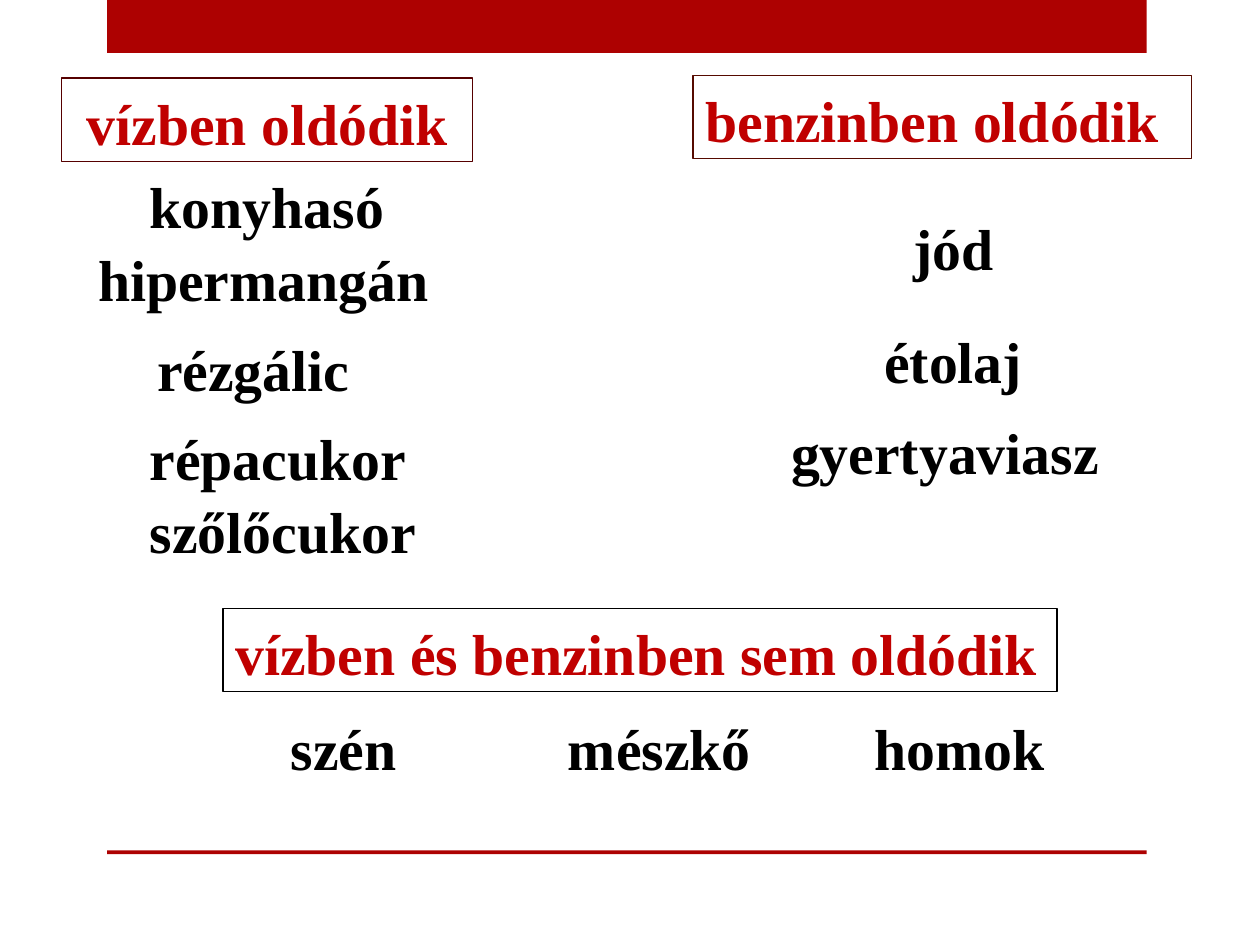
from dataclasses import dataclass

import pptx
import pptx.dml.color
import pptx.enum.shapes
import pptx.enum.text
import pptx.util

COLUMNS, ROWS = 100, 75
COLORS = {
    "band": "AD0101",
    "heading": "C00000",
    "substance": "000000",
    "water_frame": "560000",
    "petrol_frame": "560A00",
    "neither_frame": "000000",
}
LABEL_HEIGHT = 6.6


@dataclass(frozen=True)
class Area:
    column: float
    row: float
    width: float
    height: float = LABEL_HEIGHT


@dataclass(frozen=True)
class Heading:
    text: str
    area: Area
    frame: str
    centered: bool = False


@dataclass(frozen=True)
class Substance:
    lines: tuple[str, ...]
    area: Area


BANDS = (Area(8.5, 0, 82.5, 4.2), Area(8.5, 67.5, 82.5, 0.3))
HEADINGS = (
    Heading("vízben oldódik", Area(4.9, 6.2, 32.6), "water_frame", True),
    Heading("benzinben oldódik", Area(55, 6, 39.6), "petrol_frame"),
    Heading("vízben és benzinben sem oldódik", Area(17.7, 48.3, 66.2), "neither_frame"),
)
WATER_SOLUBLE = (
    Substance(("konyhasó",), Area(10.9, 12.8, 20.8)),
    Substance(("hipermangán",), Area(6.8, 18.6, 29)),
    Substance(("rézgálic",), Area(11.5, 25.7, 19)),
    Substance(("répacukor", "szőlőcukor"), Area(10.9, 32.8, 24.6, 12.1)),
)
PETROL_SOLUBLE = (
    Substance(("jód",), Area(71.5, 16.1, 10.6)),
    Substance(("étolaj",), Area(69.2, 25.1, 13)),
    Substance(("gyertyaviasz",), Area(61.8, 32.3, 27.7)),
)
INSOLUBLE_ROW = 55.8
INSOLUBLE = (
    Substance(("szén",), Area(22.1, INSOLUBLE_ROW, 11.2)),
    Substance(("mészkő",), Area(44.1, INSOLUBLE_ROW, 16.7)),
    Substance(("homok",), Area(68.4, INSOLUBLE_ROW, 17)),
)

deck = pptx.Presentation()
deck.slide_width = pptx.util.Inches(10)
deck.slide_height = pptx.util.Inches(7.5)
slide = deck.slides.add_slide(deck.slide_layouts[6])


def rgb(name: str) -> pptx.dml.color.RGBColor:
    return pptx.dml.color.RGBColor.from_string(COLORS[name])


def place(area: Area) -> tuple[int, int, int, int]:
    column = deck.slide_width / COLUMNS
    row = deck.slide_height / ROWS
    return (
        round(area.column * column),
        round(area.row * row),
        round(area.width * column),
        round(area.height * row),
    )


def draw_band(area: Area) -> None:
    band = slide.shapes.add_shape(
        pptx.enum.shapes.MSO_SHAPE.RECTANGLE, *place(area)
    )
    band.shadow.inherit = False
    band.fill.solid()
    band.fill.fore_color.rgb = rgb("band")
    band.line.fill.background()


def write(frame, *lines: str, color: str, centered: bool = False,
          size: float = 33, font: str = "Times New Roman", bold: bool = True) -> None:
    frame.word_wrap = True
    frame.vertical_anchor = pptx.enum.text.MSO_ANCHOR.TOP
    frame.auto_size = pptx.enum.text.MSO_AUTO_SIZE.SHAPE_TO_FIT_TEXT
    align = pptx.enum.text.PP_ALIGN
    for index, line in enumerate(lines):
        paragraph = frame.add_paragraph() if index else frame.paragraphs[0]
        paragraph.alignment = align.CENTER if centered else align.LEFT
        paragraph.line_spacing = 1.05
        run = paragraph.add_run()
        run.text = line
        run.font.name = font
        run.font.size = pptx.util.Pt(size)
        run.font.bold = bold
        run.font.color.rgb = rgb(color)


def draw_heading(heading: Heading) -> None:
    box = slide.shapes.add_shape(
        pptx.enum.shapes.MSO_SHAPE.RECTANGLE, *place(heading.area)
    )
    box.shadow.inherit = False
    box.fill.background()
    box.line.color.rgb = rgb(heading.frame)
    box.line.width = pptx.util.Pt(0.75)
    write(box.text_frame, heading.text, color="heading", centered=heading.centered)


def draw_substance(substance: Substance) -> None:
    label = slide.shapes.add_textbox(*place(substance.area))
    write(label.text_frame, *substance.lines, color="substance")


def main() -> None:
    for band in BANDS:
        draw_band(band)
    for heading in HEADINGS:
        draw_heading(heading)
    for substance in WATER_SOLUBLE + PETROL_SOLUBLE + INSOLUBLE:
        draw_substance(substance)
    deck.save("out.pptx")


if __name__ == "__main__":
    main()
